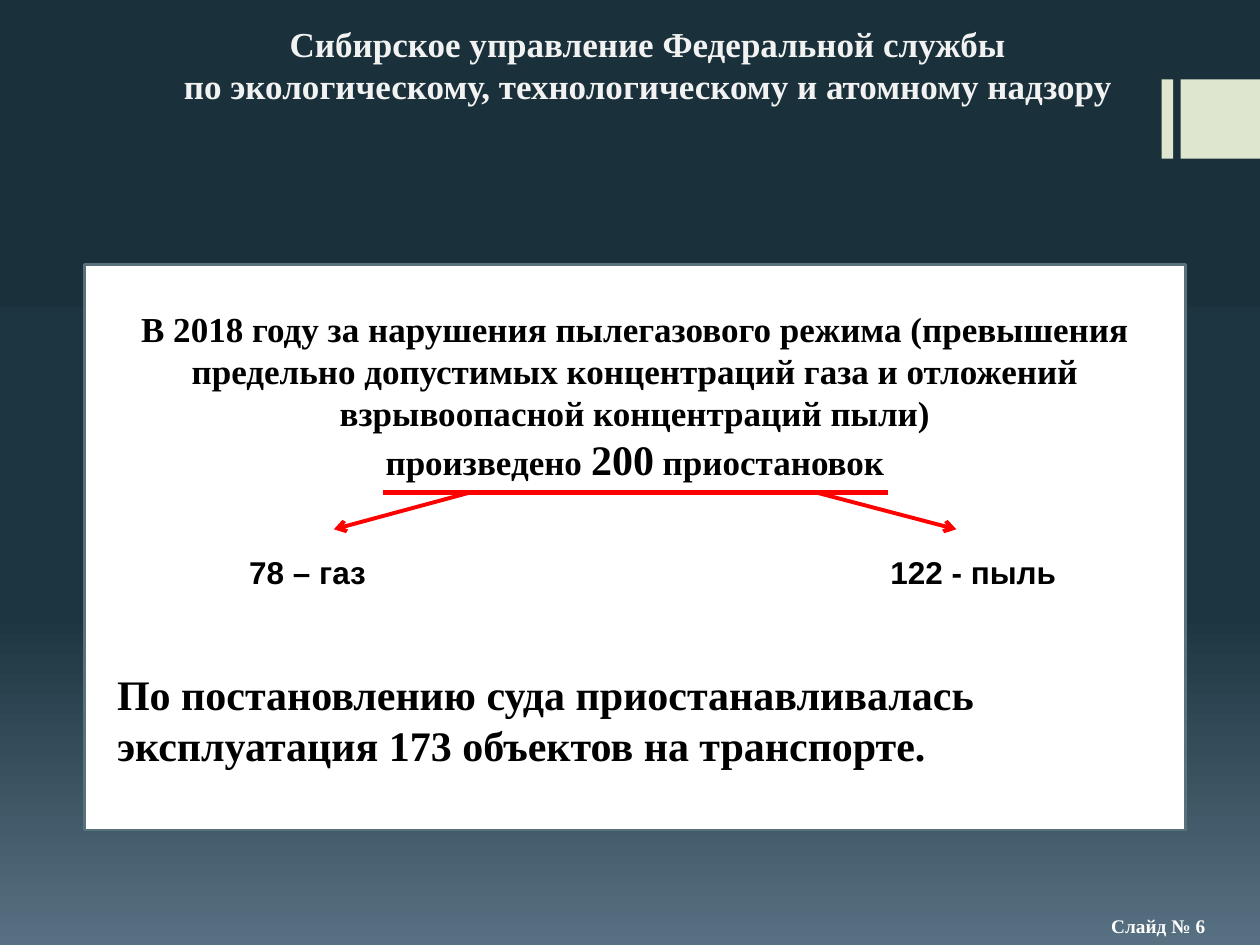
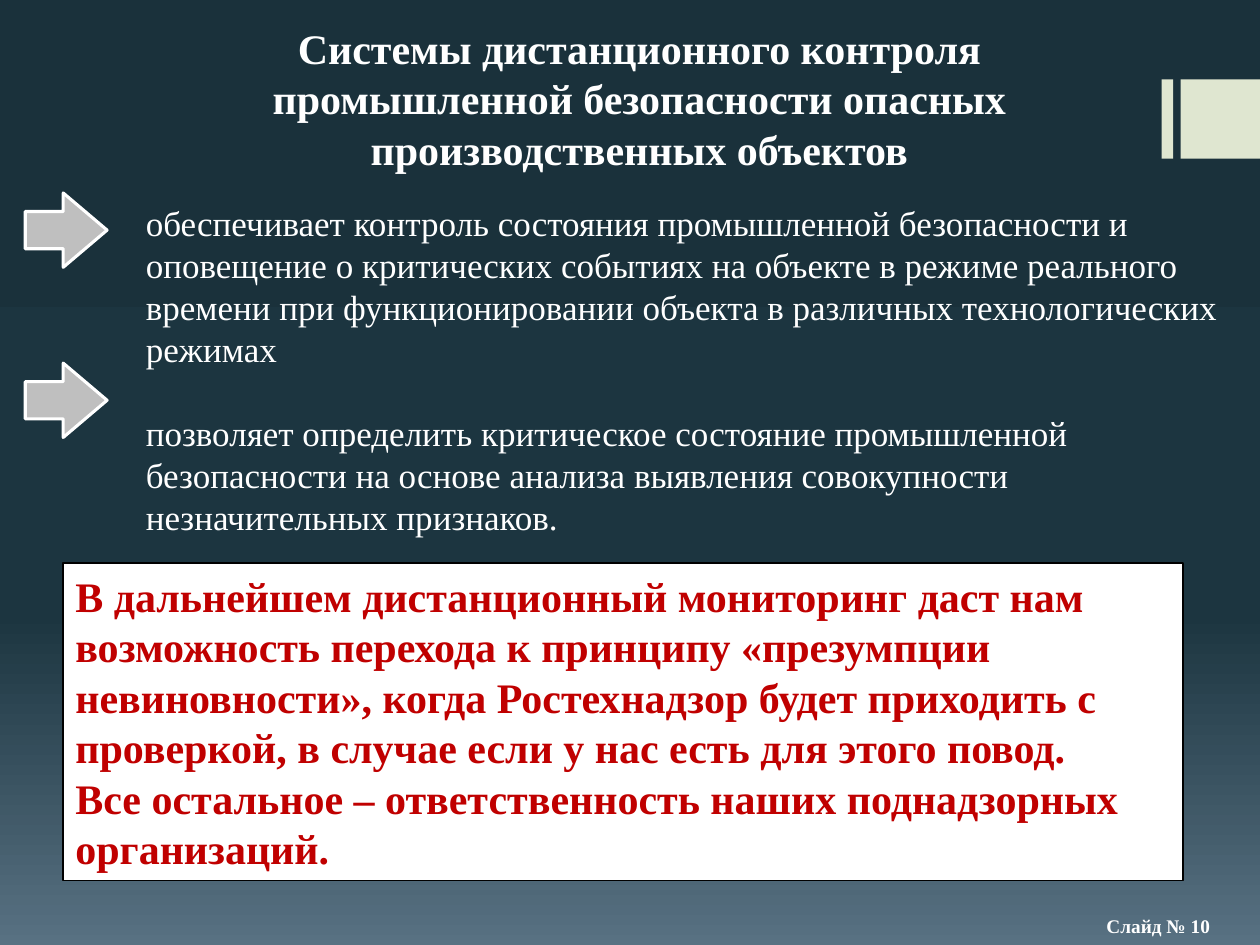
from copy import deepcopy

from pptx import Presentation
from pptx.dml.color import RGBColor
from pptx.enum.shapes import MSO_CONNECTOR, MSO_SHAPE
from pptx.enum.text import MSO_ANCHOR, PP_ALIGN
from pptx.oxml.ns import qn
from pptx.util import Cm, Pt
from lxml.etree import SubElement

WHITE = RGBColor(0xFF, 0xFF, 0xFF)
BLACK = RGBColor(0x00, 0x00, 0x00)
OFF_WHITE = RGBColor(0xF2, 0xF2, 0xF2)
GREY = RGBColor(0xBF, 0xBF, 0xBF)
PALE_GREEN = RGBColor(0xDF, 0xE6, 0xD0)
SLATE = RGBColor(0x57, 0x72, 0x7A)
RED = RGBColor(0xFF, 0x00, 0x00)
DARK_RED = RGBColor(0xC0, 0x00, 0x00)
BACKGROUND_STOPS = [
    (0, RGBColor(0x1A, 0x31, 0x3B)),
    (0.65, RGBColor(0x1C, 0x35, 0x40)),
    (1, RGBColor(0x58, 0x71, 0x82)),
]
SERIF = "Times New Roman"
SANS = "Arial"


# Shared building blocks
def write(shape, paragraphs, size, color, bold=True, align=PP_ALIGN.LEFT,
          font=SERIF, gap=0):
    """Fill a shape with paragraphs; each is a string or a list of (text, size)."""
    frame = shape.text_frame
    frame.word_wrap = True
    for index, content in enumerate(paragraphs):
        paragraph = frame.add_paragraph() if index else frame.paragraphs[0]
        paragraph.alignment = align
        if index:
            paragraph.space_before = Pt(gap)
        paragraph.font.name = font
        paragraph.font.size = Pt(size)
        paragraph.font.bold = bold
        paragraph.font.color.rgb = color
        if isinstance(content, str):
            paragraph.text = content
            continue
        for text, run_size in content:
            run = paragraph.add_run()
            run.text = text
            run.font.size = Pt(run_size)


def add_text(slide, box, paragraphs, size, color, **style):
    shape = slide.shapes.add_textbox(*map(Cm, box))
    write(shape, paragraphs, size, color, **style)
    return shape


def add_block(slide, kind, box, fill, line=None, width=1):
    shape = slide.shapes.add_shape(kind, *map(Cm, box))
    shape.shadow.inherit = False
    shape.fill.solid()
    shape.fill.fore_color.rgb = fill
    if line is None:
        shape.line.fill.background()
    else:
        shape.line.color.rgb = line
        shape.line.width = Pt(width)
    return shape


def add_line(slide, start, end, width, arrow=False):
    connector = slide.shapes.add_connector(
        MSO_CONNECTOR.STRAIGHT, *map(Cm, (*start, *end)))
    connector.line.color.rgb = RED
    connector.line.width = Pt(width)
    properties = connector._element.spPr
    if arrow:
        SubElement(properties.find(qn("a:ln")), qn("a:tailEnd"), type="arrow")
    SubElement(properties, qn("a:effectLst"))


def add_base_slide(presentation, number):
    """Blank slide with the gradient, the corner bands and the slide number."""
    slide = presentation.slides.add_slide(presentation.slide_layouts[6])

    # Background gradient, top to bottom
    fill = slide.background.fill
    fill.gradient()
    fill.gradient_angle = 270
    stop_list = next(slide.element.iter(qn("a:gsLst")))
    stop_list.append(deepcopy(stop_list[0]))
    for stop, (position, color) in zip(fill.gradient_stops, BACKGROUND_STOPS):
        stop.position = position
        stop.color.rgb = color

    # Corner bands
    for left, width in ((23.42, 0.23), (23.8, 1.6)):
        add_block(slide, MSO_SHAPE.RECTANGLE, (left, 1.6, width, 1.6), PALE_GREEN)

    # Slide number
    footer = add_text(slide, (21.85, 18.29, 3, 0.74), [f"Слайд № {number}"],
                      11, WHITE, align=PP_ALIGN.CENTER)
    footer.text_frame.vertical_anchor = MSO_ANCHOR.MIDDLE
    return slide


# Slide: suspensions in 2018
def add_suspensions_card(slide, box):
    left, top, width, height = box
    add_block(slide, MSO_SHAPE.RECTANGLE, box, WHITE, SLATE, 1.5)

    # Total
    add_text(slide, (left, top + 0.74, width, 3.84), [
        "В 2018 году за нарушения пылегазового режима (превышения предельно "
        "допустимых концентраций газа и отложений взрывоопасной концентраций пыли)",
        [("произведено ", 20), ("200", 24), (" приостановок", 20)],
    ], 20, BLACK, align=PP_ALIGN.CENTER)

    # Underline with a branch to each cause
    rule = top + 4.6
    add_line(slide, (left + 6.02, rule), (left + 16.21, rule), 2.75)
    causes = [("78 – газ", 7.77, 5.03, 4.5), ("122 - пыль", 14.76, 17.58, 17.92)]
    label_width = 5
    for label, start, end, center in causes:
        add_line(slide, (left + start, rule), (left + end, rule + 0.74), 2.25, arrow=True)
        add_text(slide, (left + center - label_width / 2, rule + 1.09, label_width, 1.02),
                 [label], 18, BLACK, align=PP_ALIGN.CENTER, font=SANS)

    # Court rulings
    add_text(slide, (left + 0.41, top + 8.03, width - 0.8, 2.31), [
        "По постановлению суда приостанавливалась эксплуатация 173 объектов на транспорте.",
    ], 24, BLACK)


def add_suspensions_slide(presentation):
    slide = add_base_slide(presentation, 6)
    title = add_text(slide, (1.63, 0.33, 22.86, 2.21), [
        "Сибирское управление Федеральной службы\v"
        "по экологическому, технологическому и атомному надзору",
    ], 20, OFF_WHITE, align=PP_ALIGN.CENTER)
    title.text_frame.margin_left = title.text_frame.margin_right = 0
    add_suspensions_card(slide, (1.7, 5.33, 22.2, 11.4))


# Slide: remote monitoring systems
def add_features(slide, box):
    left, top, width, height = box
    add_text(slide, (left + 2.18, top, width - 2.18, height), [
        "обеспечивает контроль состояния промышленной безопасности и оповещение "
        "о критических событиях на объекте в режиме реального времени при "
        "функционировании объекта в различных технологических режимах",
        "позволяет определить критическое состояние промышленной безопасности "
        "на основе анализа выявления совокупности незначительных признаков.",
    ], 20, WHITE, bold=False, gap=24)
    for row in range(2):
        arrow = add_block(slide, MSO_SHAPE.RIGHT_ARROW,
                          (left, top - 0.05 + row * 3.43, 1.65, 1.5), GREY, WHITE, 1.75)
        arrow.adjustments[1] = 0.59


def add_monitoring_slide(presentation):
    slide = add_base_slide(presentation, 10)
    add_text(slide, (2.69, 0.33, 20.4, 3.33), [
        "Системы дистанционного контроля промышленной безопасности опасных "
        "производственных объектов",
    ], 24, WHITE, align=PP_ALIGN.CENTER)
    add_features(slide, (0.51, 3.94, 24.79, 7.09))

    # Conclusion
    conclusion = add_block(slide, MSO_SHAPE.RECTANGLE, (1.27, 11.35, 22.58, 6.4),
                           WHITE, BLACK)
    write(conclusion, [
        "В дальнейшем дистанционный мониторинг даст нам возможность перехода "
        "к принципу «презумпции невиновности», когда Ростехнадзор будет приходить "
        "с проверкой, в случае если у нас есть для этого повод.",
        "Все остальное – ответственность наших поднадзорных организаций.",
    ], 24, DARK_RED)


def main():
    presentation = Presentation()
    presentation.slide_width = Cm(25.4)
    presentation.slide_height = Cm(19.05)
    add_suspensions_slide(presentation)
    add_monitoring_slide(presentation)
    presentation.save("out.pptx")


if __name__ == "__main__":
    main()
